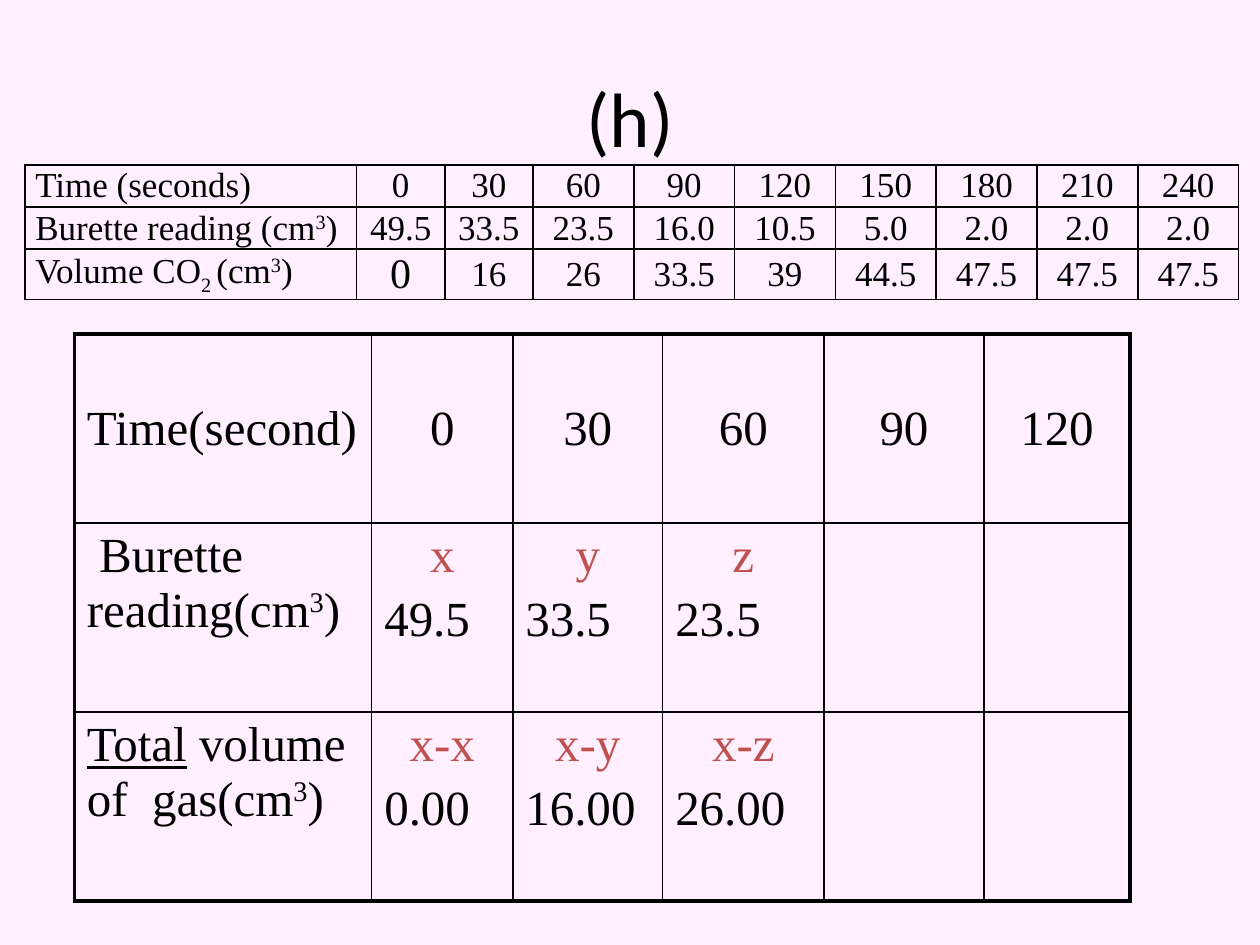
from pptx import Presentation
from pptx.dml.color import RGBColor
from pptx.enum.text import MSO_ANCHOR as Anchor, PP_ALIGN as Align
from pptx.oxml import parse_xml
from pptx.oxml.ns import nsdecls
from pptx.util import Inches, Pt

COLORS = {"background": "FFEFFF", "ink": "000000", "formula": "C0504D"}
SERIF = "Times New Roman"
THIN, THICK = 1, 2.25
CUBED = [("3", {"baseline": "30000"}), (")", {})]


def write(paragraph, runs, size, align, color="ink", font=SERIF):
    """Add (text, run attributes) pairs, or one plain string, to a paragraph."""
    paragraph.alignment = align
    for text, attributes in [(runs, {})] if isinstance(runs, str) else runs:
        run = paragraph.add_run()
        run.text = text
        run.font.name = font
        run.font.size = Pt(size)
        run.font.color.rgb = RGBColor.from_string(COLORS[color])
        for key, value in attributes.items():
            run._r.get_or_add_rPr().set(key, value)


def add_grid(left, top, widths, heights, outer):
    """Add an unfilled table with thin inner lines and the given outer line width."""
    rows, cols = len(heights), len(widths)
    table = slide.shapes.add_table(rows, cols, Inches(left), Inches(top),
                                   Inches(sum(widths)), Inches(sum(heights))).table
    table.first_row = table.horz_banding = False
    for column, width in zip(table.columns, widths):
        column.width = Inches(width)
    for row, height in zip(table.rows, heights):
        row.height = Inches(height)
    for r in range(rows):
        for c in range(cols):
            cell = table.cell(r, c)
            cell.fill.background()
            on_edge = {"L": c == 0, "R": c == cols - 1, "T": r == 0, "B": r == rows - 1}
            for position, (side, is_outer) in enumerate(on_edge.items()):
                weight = Pt(outer if is_outer else THIN)
                cell._tc.get_or_add_tcPr().insert(position, parse_xml(
                    f'<a:ln{side} {nsdecls("a")} w="{weight}"><a:solidFill>'
                    f'<a:srgbClr val="{COLORS["ink"]}"/></a:solidFill></a:ln{side}>'))
    return table


prs = Presentation()
prs.slide_width, prs.slide_height = Inches(10), Inches(7.5)
slide = prs.slides.add_slide(prs.slide_layouts[6])
slide.background.fill.solid()
slide.background.fill.fore_color.rgb = RGBColor.from_string(COLORS["background"])

title = slide.shapes.add_textbox(Inches(0.5), Inches(0.3), Inches(9), Inches(1.25)).text_frame
title.word_wrap = True
title.vertical_anchor = Anchor.MIDDLE
write(title.paragraphs[0], "(h)", 44, Align.CENTER, font="Calibri")

# Full set of readings
readings = [
    ["Time (seconds)", "0", "30", "60", "90", "120", "150", "180", "210", "240"],
    [[("Burette reading (cm", {}), *CUBED],
     "49.5", "33.5", "23.5", "16.0", "10.5", "5.0", "2.0", "2.0", "2.0"],
    [[("Volume CO", {}), ("2 ", {"baseline": "-25000"}), ("(cm", {}), *CUBED],
     "0", "16", "26", "33.5", "39", "44.5", "47.5", "47.5", "47.5"],
]
readings_table = add_grid(0.2, 1.31, [2.63] + [0.7] * 2 + [0.8] * 7, [0.33, 0.33, 0.4], THIN)
for r, row in enumerate(readings):
    for c, entry in enumerate(row):
        cell = readings_table.cell(r, c)
        cell.vertical_anchor = Anchor.MIDDLE
        cell.margin_left = cell.margin_right = Inches(0.08)
        cell.margin_top = cell.margin_bottom = 0
        size = 24 if (r, c) == (2, 1) else 20
        write(cell.text_frame.paragraphs[0], entry, size, Align.CENTER if c else Align.JUSTIFY)

# Worked example: formula above its value
worked_table = add_grid(0.59, 2.65, [2.36, 1.12, 1.19, 1.28, 1.27, 1.16], [1.5] * 3, THICK)
times = ["Time(second)", "0", "30", "60", "90", "120"]
for c, time in enumerate(times):
    cell = worked_table.cell(0, c)
    cell.vertical_anchor = Anchor.MIDDLE
    write(cell.text_frame.paragraphs[0], time, 28, Align.CENTER if c else Align.LEFT)

worked = [
    ([(" Burette reading(cm", {}), *CUBED],
     [("x", "49.5"), ("y", "33.5"), ("z", "23.5")]),
    ([("Total", {"u": "sng"}), (" volume of  gas(cm", {}), *CUBED],
     [("x-x", "0.00"), ("x-y", "16.00"), ("x-z", "26.00")]),
]
for r, (label, results) in enumerate(worked, start=1):
    write(worked_table.cell(r, 0).text_frame.paragraphs[0], label, 28, Align.LEFT)
    for c, (formula, value) in enumerate(results, start=1):
        frame = worked_table.cell(r, c).text_frame
        write(frame.paragraphs[0], formula, 28, Align.CENTER, "formula")
        value_line = frame.add_paragraph()
        value_line.space_before = Pt(5.6)
        write(value_line, value, 28, Align.LEFT)

prs.save("out.pptx")
